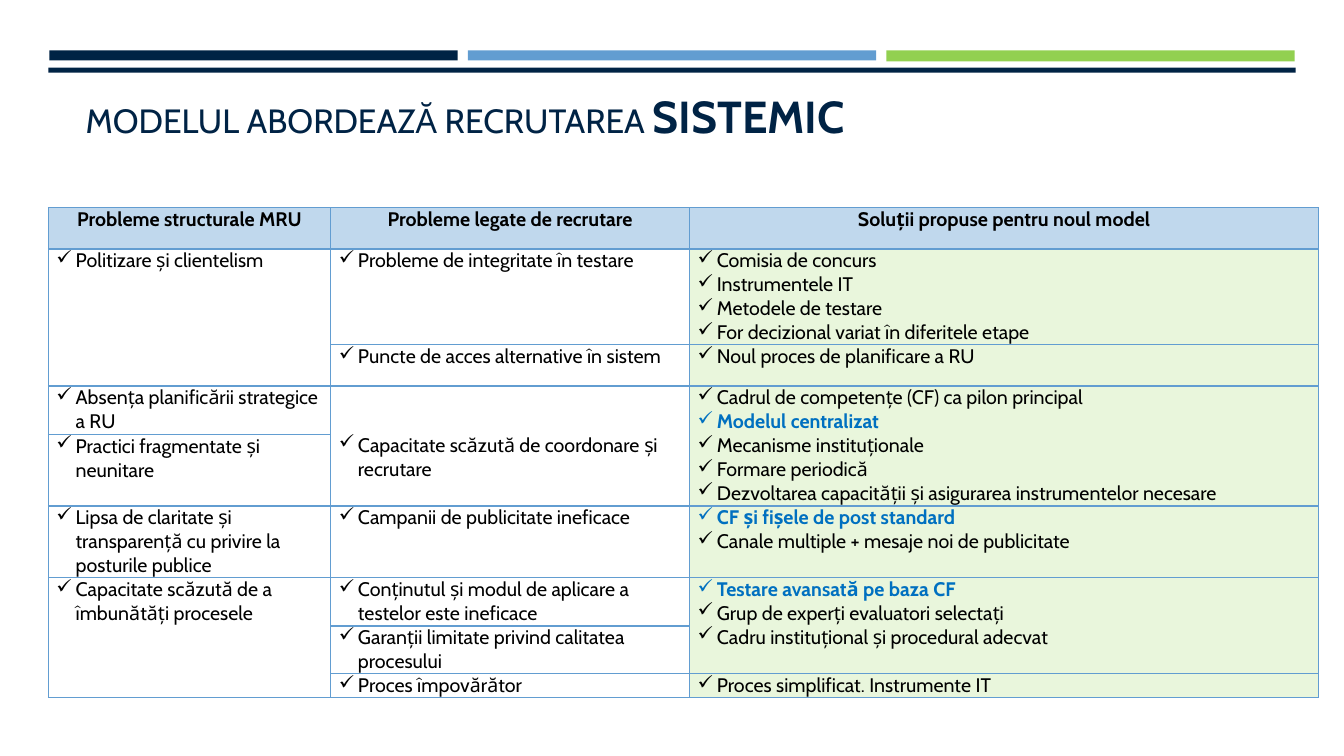
from lxml.etree import SubElement as Sub
from pptx import Presentation
from pptx.dml.color import RGBColor
from pptx.enum.shapes import MSO_SHAPE as Shape
from pptx.enum.text import MSO_ANCHOR as Anchor, MSO_AUTO_SIZE as Fit, PP_ALIGN as Align
from pptx.oxml.ns import qn
from pptx.util import Inches, Pt

NAVY, BLUE, GREEN = "002345", "629DD1", "92D050"
HEAD, PALE, WHITE = "C0D8ED", "E9F6DC", "FFFFFF"


def rgb(code):
    return RGBColor.from_string(code)


def style(font, size, color, bold=False):
    font.name, font.size, font.bold = "Cabin", Pt(size), bold
    font.color.rgb = rgb(color)


deck = Presentation()
deck.slide_width, deck.slide_height = Inches(13.33), Inches(7.5)
slide = deck.slides.add_slide(deck.slide_layouts[5])

# Bars across the top
bars = [(0.49, 0.5, 4.05, 0.1, NAVY), (4.64, 0.5, 4.05, 0.1, BLUE),
        (8.79, 0.5, 4.05, 0.11, GREEN), (0.48, 0.67, 12.37, 0.05, NAVY)]
for *box, color in bars:
    bar = slide.shapes.add_shape(Shape.RECTANGLE, *map(Inches, box))
    bar.shadow.inherit = False
    bar.fill.solid()
    bar.fill.fore_color.rgb = rgb(color)
    bar.line.fill.background()

# Title
title = slide.shapes.title
title.left, title.top = Inches(0), Inches(0.72)
title.width, title.height = Inches(13.13), Inches(0.74)
frame = title.text_frame
frame.auto_size, frame.word_wrap = Fit.NONE, True
frame.vertical_anchor = Anchor.BOTTOM
para = frame.paragraphs[0]
para.alignment, para.space_after = Align.JUSTIFY, Pt(8)
para._p.get_or_add_pPr().set("marL", str(Inches(0.75)))
for text, size, bold in [("MODELUL ABORDEAZĂ RECRUTAREA ", 24, False),
                         ("SISTEMIC", 32, True)]:
    run = para.add_run()
    run.text = text
    style(run.font, size, NAVY, bold)

# Table text: one list of lines per cell, * marks a highlight, None is merged
rows = [
    (["Probleme structurale MRU"], ["Probleme legate de recrutare"],
     ["Soluții propuse pentru noul model"]),
    (["Politizare și clientelism"], ["Probleme de integritate în testare"],
     ["Comisia de concurs", "Instrumentele IT", "Metodele de testare",
      "For decizional variat în diferitele etape"]),
    (None, ["Puncte de acces alternative în sistem"],
     ["Noul proces de planificare a RU"]),
    (["Absența planificării strategice a RU"],
     ["Capacitate scăzută de coordonare și recrutare"],
     ["Cadrul de competențe (CF) ca pilon principal", "*Modelul centralizat",
      "Mecanisme instituționale", "Formare periodică",
      "Dezvoltarea capacității și asigurarea instrumentelor necesare"]),
    (["Practici fragmentate și neunitare"], None, None),
    (["Lipsa de claritate și transparență cu privire la posturile publice"],
     ["Campanii de publicitate ineficace"],
     ["*CF și fișele de post standard",
      "Canale multiple + mesaje noi de publicitate"]),
    (["Capacitate scăzută de a îmbunătăți procesele"],
     ["Conținutul și modul de aplicare a testelor este ineficace"],
     ["*Testare avansată pe baza CF", "Grup de experți evaluatori selectați",
      "Cadru instituțional și procedural adecvat"]),
    (None, ["Garanții limitate privind calitatea procesului"], None),
    (None, ["Proces împovărător"], ["Proces simplificat. Instrumente IT"]),
]
wide = [2.8, 3.56, 6.24]
high = [0.41, 0.95, 0.41, 0.48, 0.71, 0.71, 0.48, 0.47, 0.24]

# Table grid
table = slide.shapes.add_table(
    len(rows), len(wide), Inches(0.48), Inches(2.06),
    Inches(sum(wide)), Inches(sum(high))).table
table.first_row = table.horz_banding = False
for col, size in zip(table.columns, wide):
    col.width = Inches(size)
for row, size in zip(table.rows, high):
    row.height = Inches(size)
for top, end, col in [(1, 2, 0), (3, 4, 1), (3, 4, 2), (6, 8, 0), (6, 7, 2)]:
    table.cell(top, col).merge(table.cell(end, col))

# Table cells
for r, row in enumerate(rows):
    for c, lines in enumerate(row):
        cell = table.cell(r, c)
        cell.margin_left = Inches(0.08 if r else 0)
        cell.margin_right = cell.margin_top = cell.margin_bottom = 0
        if (r, c) == (3, 1):
            cell.margin_top = Inches(0.47)

        # Borders, heavier under the header
        props = cell._tc.get_or_add_tcPr()
        for side in "LRTB":
            thick = (r, side) in [(0, "B"), (1, "T")]
            edge = Sub(props, qn("a:ln" + side), w=str(Pt(2 if thick else 1)))
            Sub(Sub(edge, qn("a:solidFill")), qn("a:srgbClr"), val=BLUE)
        cell.fill.solid()
        cell.fill.fore_color.rgb = rgb(HEAD if r == 0 else PALE if c == 2 else WHITE)

        for i, line in enumerate(lines or []):
            frame = cell.text_frame
            para = frame.add_paragraph() if i else frame.paragraphs[0]
            mark = line.startswith("*")
            para.text = line.lstrip("*")
            if r:
                form = para._p.get_or_add_pPr()
                form.set("marL", str(Inches(0.19)))
                form.set("indent", str(Inches(-0.19)))
                Sub(form, qn("a:buChar"), char="✓")
            else:
                para.alignment = Align.CENTER
            style(para.font, 14, "0070C0" if mark else "000000", mark or r == 0)

deck.save("out.pptx")
